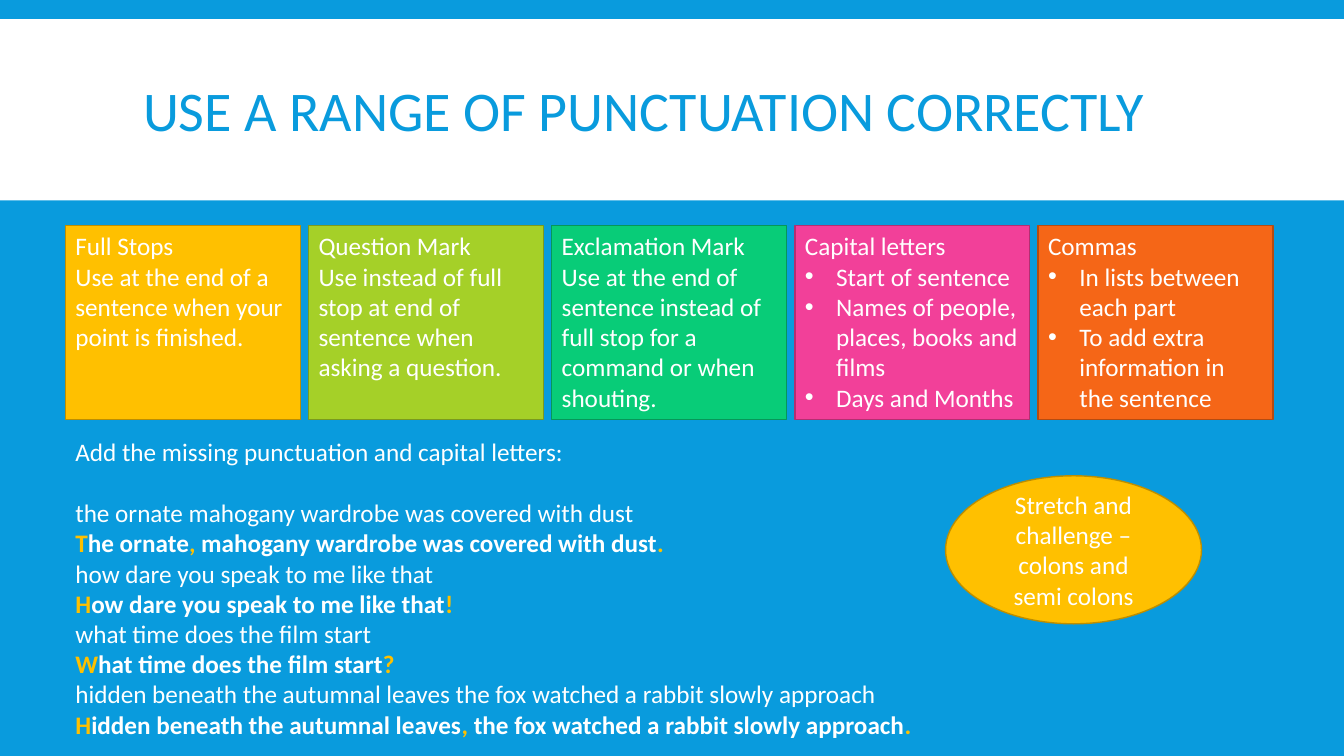
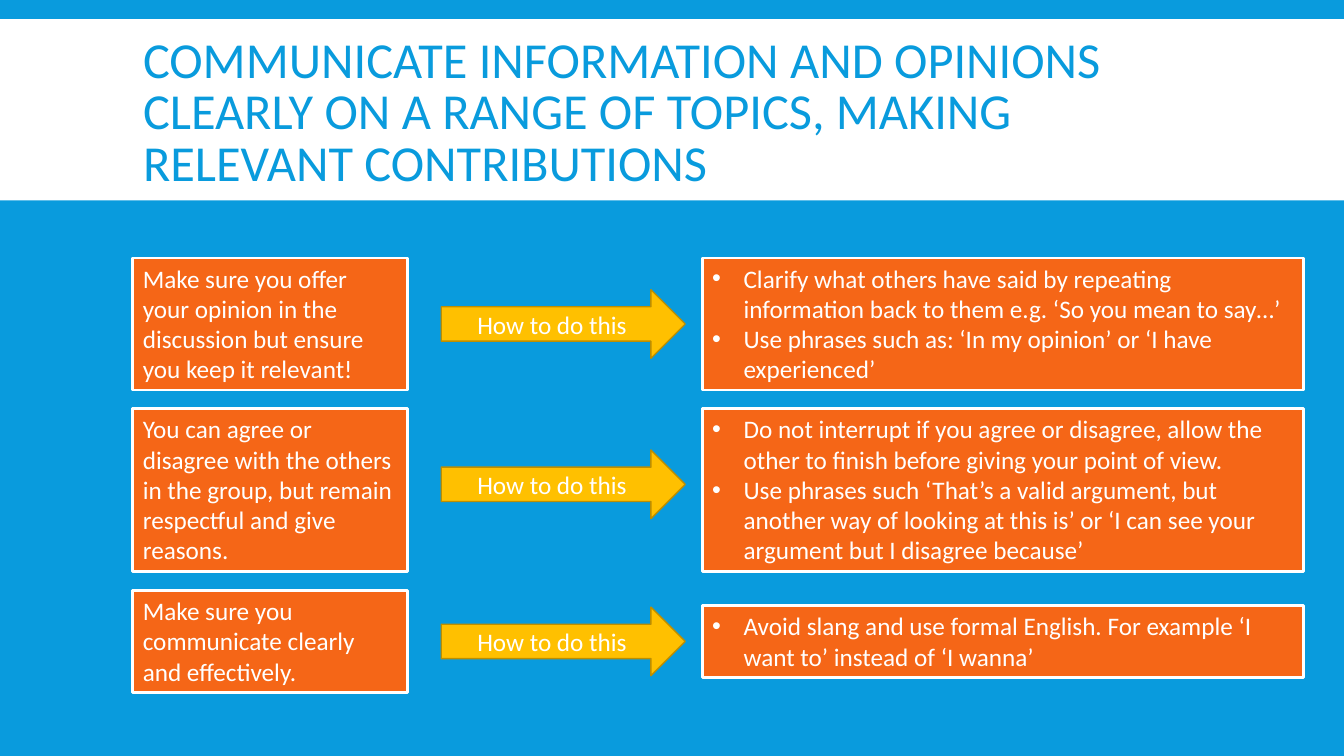
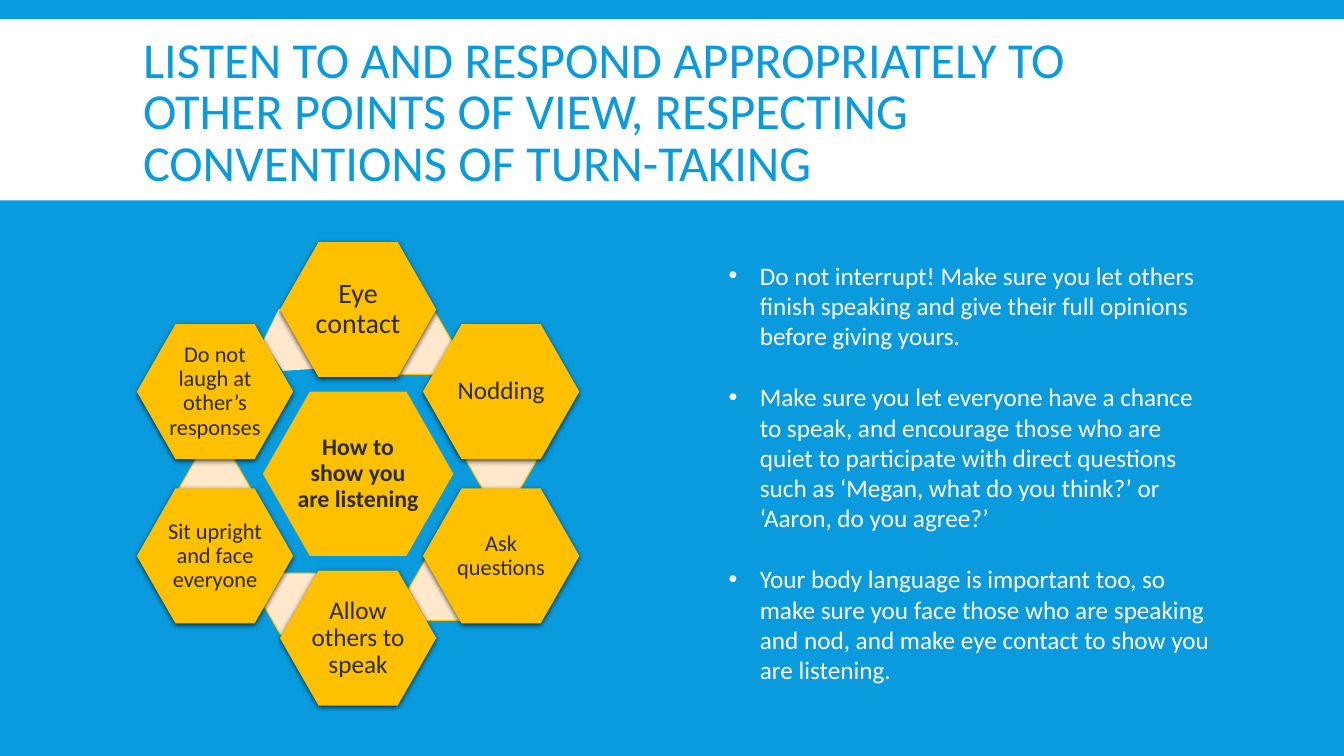
import pptx
import pptx.dml.color
import pptx.enum.shapes
import pptx.enum.text
import pptx.oxml
import pptx.oxml.ns
import pptx.util
from lxml import etree

Cm, Pt = pptx.util.Cm, pptx.util.Pt
SHAPE = pptx.enum.shapes.MSO_SHAPE
ALIGN = pptx.enum.text.PP_ALIGN
ANCHOR = pptx.enum.text.MSO_ANCHOR

# Shared look
FONT = "Calibri"
BLUE, WHITE, INK = "099BDD", "FFFFFF", "2C2C2C"
GOLD, GOLD_EDGE = "FFC000", "BD8E00"
ORANGE, PEACH = "F56617", "FFE8CC"
SLIDE_W, SLIDE_H = 33.87, 19.05
BAND_BOX = (0, 0.48, SLIDE_W, 4.57)
TITLE_BOX = (3.35, 0.79, 27.18, 4.19)
BULLET_INDENT = 0.79
BLANK_LINE = 22


def rgb(value):
    return pptx.dml.color.RGBColor.from_string(value)


def assign(target, values):
    for name, value in values.items():
        setattr(target, name, value)


def place(slide, kind, box, fill, edge=None, edge_width=1):
    """Add a flat preset shape; box is left, top, width, height in cm."""
    shape = slide.shapes.add_shape(kind, *map(Cm, box))
    shape.shadow.inherit = False
    shape.fill.solid()
    shape.fill.fore_color.rgb = rgb(fill)
    if edge:
        shape.line.color.rgb = rgb(edge)
        shape.line.width = Pt(edge_width)
    else:
        shape.line.fill.background()
    return shape


def add_bullet(paragraph):
    properties = paragraph._p.get_or_add_pPr()
    properties.set("marL", str(Cm(BULLET_INDENT)))
    properties.set("indent", str(-Cm(BULLET_INDENT)))
    qn = pptx.oxml.ns.qn
    etree.SubElement(properties, qn("a:buFont")).set("typeface", "Arial")
    etree.SubElement(properties, qn("a:buChar")).set("char", "•")


def write(shape, lines, size=18, color=WHITE, bold=False, align=ALIGN.LEFT,
          anchor=ANCHOR.TOP, spacing=None, frame_format=None):
    """Fill a shape with lines: '• ' starts a bullet, |…| marks gold letters."""
    frame = shape.text_frame
    assign(frame, {"word_wrap": True, "vertical_anchor": anchor,
                   "auto_size": pptx.enum.text.MSO_AUTO_SIZE.NONE,
                   **(frame_format or {})})
    for number, line in enumerate(lines):
        paragraph = frame.paragraphs[0] if number == 0 else frame.add_paragraph()
        assign(paragraph, {"alignment": align, "line_spacing": spacing})
        if line.startswith("• "):
            add_bullet(paragraph)
            line = line[2:]
        marked = "|" in line
        for part, words in enumerate(line.split("|")):
            if words:
                run = paragraph.add_run()
                run.text = words
                assign(run.font, {"name": FONT, "size": Pt(size),
                                  "bold": bold or marked})
                run.font.color.rgb = rgb(GOLD if part % 2 else color)
    return frame


def add_text(slide, box, lines):
    return write(slide.shapes.add_textbox(*map(Cm, box)), lines)


def titled_slide(deck, heading, size):
    slide = deck.slides.add_slide(deck.slide_layouts[5])
    title = slide.shapes.title
    assign(title, dict(zip(("left", "top", "width", "height"), map(Cm, TITLE_BOX))))
    write(title, [heading], size, BLUE, anchor=ANCHOR.MIDDLE, spacing=0.85)
    band = place(slide, SHAPE.RECTANGLE, BAND_BOX, WHITE)
    title.element.addprevious(band.element)
    return slide


# Slide 1: punctuation
RULES = [
    (GOLD, GOLD_EDGE, ["Full Stops",
                       "Use at the end of a sentence when your point is finished."]),
    ("A5D028", "7A9A1E", ["Question Mark",
                          "Use instead of full stop at end of sentence when asking a question."]),
    ("08CC78", "069759", ["Exclamation Mark",
                          "Use at the end of sentence instead of full stop for a command "
                          "or when shouting."]),
    ("F24099", "B32F71", ["Capital letters", "• Start of sentence",
                          "• Names of people, places, books and films",
                          "• Days and Months"]),
    (ORANGE, "B54B11", ["Commas", "• In lists between each part",
                        "• To add extra information in the sentence"]),
]
EXERCISE = [
    "Add the missing punctuation and capital letters:",
    "the ornate mahogany wardrobe was covered with dust",
    "|T|he ornate|, |mahogany wardrobe was covered with dust|.|",
    "how dare you speak to me like that",
    "|H|ow dare you speak to me like that|!|",
    "what time does the film start",
    "|W|hat time does the film start|?|",
    "hidden beneath the autumnal leaves the fox watched a rabbit slowly approach",
    "|H|idden beneath the autumnal leaves|, |the fox watched a rabbit slowly approach|.|",
]


def rule_cards(slide, box, gap=0.21):
    left, top, width, height = box
    card_width = (width - gap * (len(RULES) - 1)) / len(RULES)
    for column, (fill, edge, lines) in enumerate(RULES):
        card_box = (left + column * (card_width + gap), top, card_width, height)
        write(place(slide, SHAPE.RECTANGLE, card_box, fill, edge), lines)


def punctuation_slide(deck):
    slide = titled_slide(deck, "USE A RANGE OF PUNCTUATION CORRECTLY", 40)
    rule_cards(slide, (1.65, 5.69, 30.43, 4.88))
    exercise = add_text(slide, (1.65, 10.87, 30.38, 7.95), EXERCISE)
    exercise.paragraphs[1].space_before = Pt(BLANK_LINE)
    challenge = place(slide, SHAPE.OVAL, (23.83, 11.99, 6.45, 3.73), GOLD, GOLD_EDGE)
    write(challenge, ["Stretch and challenge –colons and semi colons"],
          align=ALIGN.CENTER, anchor=ANCHOR.MIDDLE)


# Slide 2: discussion; each row has height, answer height, arrow shift, aim, answer
DISCUSSION = [
    (3.33, 3.33, 0,
     "Make sure you offer your opinion in the discussion but ensure you keep it relevant!",
     ["• Clarify what others have said by repeating information back to them "
      "e.g. ‘So you mean to say…’",
      "• Use phrases such as: ‘In my opinion’ or ‘I have experienced’"]),
    (4.11, 4.11, -0.15,
     "You can agree or disagree with the others in the group, but remain "
     "respectful and give reasons.",
     ["• Do not interrupt if you agree or disagree, allow the other to finish "
      "before giving your point of view.",
      "• Use phrases such ‘That’s a valid argument, but another way of looking at "
      "this is’ or ‘I can see your argument but I disagree because’"]),
    (2.57, 1.8, 0,
     "Make sure you communicate clearly and effectively.",
     ["• Avoid slang and use formal English. For example ‘I want to’ instead of "
      "‘I wanna’"]),
]


def discussion_row(slide, box, answer_height, arrow_shift, aim, answer):
    left, top, width, height = box
    middle = top + height / 2
    aim_width, answer_width, arrow_height = 6.93, 15.16, 1.73
    panels = [((left, top, aim_width, height), [aim]),
              ((left + width - answer_width, middle - answer_height / 2,
                answer_width, answer_height), answer)]
    for panel_box, lines in panels:
        write(place(slide, SHAPE.RECTANGLE, panel_box, ORANGE, WHITE, 2), lines)
    arrow_box = (left + 7.77, middle - arrow_height / 2 + arrow_shift, 6.15, arrow_height)
    arrow = place(slide, SHAPE.RIGHT_ARROW, arrow_box, GOLD, GOLD_EDGE)
    write(arrow, ["How to do this"], anchor=ANCHOR.MIDDLE,
          frame_format={"margin_left": Cm(0.91), "margin_right": 0,
                        "margin_top": 0, "margin_bottom": 0})


def discussion_slide(deck):
    slide = titled_slide(deck, "COMMUNICATE INFORMATION AND OPINIONS CLEARLY ON A RANGE "
                               "OF TOPICS, MAKING RELEVANT CONTRIBUTIONS", 36)
    top, gap = 6.5, 0.47
    for height, *parts in DISCUSSION:
        discussion_row(slide, (3.35, top, 29.51, height), *parts)
        top += height + gap


# Slide 3: listening; each petal has column, half-steps down, size and words
PETALS = [
    (0, -2, 20, "Eye contact"),
    (1, -1, 18, "Nodding"),
    (1, 1, 16, "Ask questions"),
    (0, 2, 18, "Allow others to speak"),
    (-1, 1, 16, "Sit upright and face everyone"),
    (-1, -1, 16, "Do not laugh at other’s responses"),
]
# Offset of each link from the hub, rotation, edge
LINKS = [(-1.5, -3.4, 56.2, None), (1.5, -3.28, 0, GOLD), (3.61, -0.36, 0, GOLD),
         (2.16, 2.92, 0, GOLD), (-1.5, 3.28, 0, GOLD), (-3.61, 0.36, 0, GOLD)]
ADVICE = [
    "• Do not interrupt! Make sure you let others finish speaking and give their full "
    "opinions before giving yours.",
    "• Make sure you let everyone have a chance to speak, and encourage those who are "
    "quiet to participate with direct questions such as ‘Megan, what do you think?’ or "
    "‘Aaron, do you agree?’",
    "• Your body language is important too, so make sure you face those who are speaking "
    "and nod, and make eye contact to show you are listening.",
]


def add_shadow(shape):
    effects = shape.element.spPr.find(pptx.oxml.ns.qn("a:effectLst"))
    effects.append(pptx.oxml.parse_xml(
        f'<a:outerShdw {pptx.oxml.ns.nsdecls("a")} blurRad="{Pt(4)}" dist="{Pt(1.2)}" '
        'dir="5400000" rotWithShape="0"><a:srgbClr val="000000">'
        '<a:alpha val="68000"/></a:srgbClr></a:outerShdw>'))


def listening_wheel(slide, box):
    left, top, width, height = box
    hub_x, hub_y = left + width / 2, top + height / 2
    petal_width, petal_height = 3.94, 3.4
    step_x, step_y = (width - petal_width) / 2, (height - petal_height) / 4

    def hexagon(dx, dy, w, h, fill, edge=None, adjustment=0.286):
        shape = place(slide, SHAPE.HEXAGON,
                      (hub_x + dx - w / 2, hub_y + dy - h / 2, w, h), fill, edge, 0.75)
        shape.adjustments[0] = adjustment
        return shape

    def label(shape, words, size, bold=False):
        sides = ("left", "right", "top", "bottom")
        write(shape, [words], size, INK, bold, ALIGN.CENTER, ANCHOR.MIDDLE, 0.9,
              {f"margin_{side}": Cm(0.06) for side in sides})

    for dx, dy, rotation, edge in LINKS:
        hexagon(dx, dy, 1.8, 1.55, PEACH, edge, 0.289).rotation = rotation
    label(hexagon(0, 0, 4.8, 4.14, GOLD), "How to show you are listening", 17, True)
    for column, row, size, words in PETALS:
        petal = hexagon(column * step_x, row * step_y, petal_width, petal_height, GOLD)
        add_shadow(petal)
        label(petal, words, size)


def listening_slide(deck):
    slide = titled_slide(deck, "LISTEN TO AND RESPOND APPROPRIATELY TO OTHER POINTS OF "
                               "VIEW, RESPECTING CONVENTIONS OF TURN-TAKING", 36)
    listening_wheel(slide, (3.45, 6.1, 11.15, 11.68))
    advice = add_text(slide, (18.11, 6.43, 12.83, 11.02), ADVICE)
    for paragraph in advice.paragraphs[1:]:
        paragraph.space_before = Pt(BLANK_LINE)


def main():
    deck = pptx.Presentation()
    assign(deck, {"slide_width": Cm(SLIDE_W), "slide_height": Cm(SLIDE_H)})
    backdrop = deck.slide_master.background.fill
    backdrop.solid()
    backdrop.fore_color.rgb = rgb(BLUE)
    for build in (punctuation_slide, discussion_slide, listening_slide):
        build(deck)
    deck.save("out.pptx")


if __name__ == "__main__":
    main()
